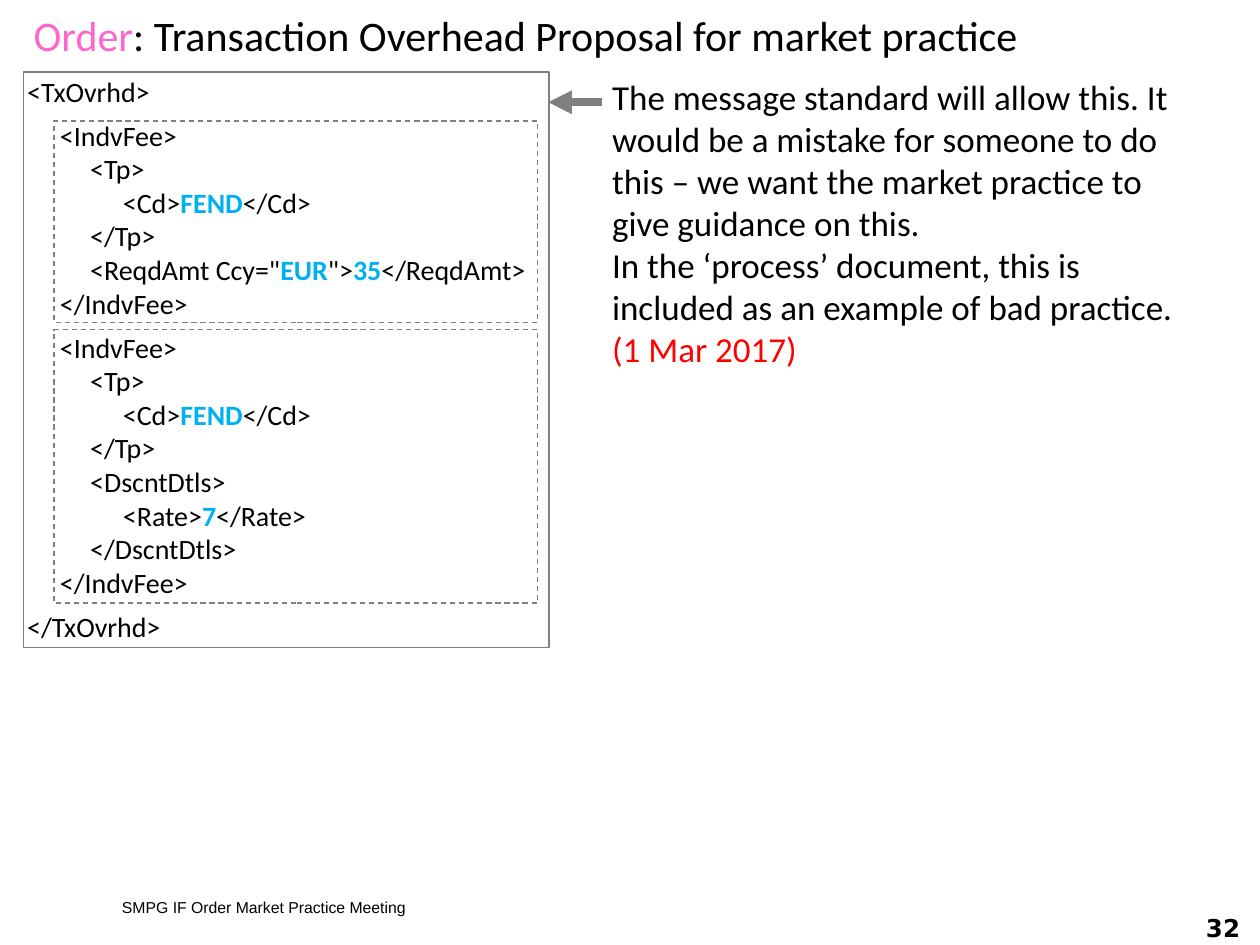
import pptx
import pptx.dml.color
import pptx.enum.dml
import pptx.enum.shapes
import pptx.enum.text
import pptx.oxml
import pptx.oxml.ns
import pptx.util

Cm, Pt = pptx.util.Cm, pptx.util.Pt
ALIGN = pptx.enum.text.PP_ALIGN
ANCHOR = pptx.enum.text.MSO_ANCHOR
BLACK, GREY, WHITE = "000000", "808080", "FFFFFF"
PINK, BLUE, RED = "FF66CC", "00B0F0", "FF0000"

# Content: a run is (text, colour)
TITLE = [[("Order", PINK), (": Transaction Overhead Proposal for market practice", BLACK)]]
COMMENT = [
    [("The message standard will allow this. It would be a mistake for someone to do this "
      "– we want the market practice to give guidance on this.", BLACK)],
    [("In the ‘process’ document, this is included as an example of bad practice. ", BLACK),
     ("(1 Mar 2017)", RED)],
]
FOOTER = [[("SMPG IF Order Market Practice Meeting", BLACK)]]
PAGE_NUMBER = [[("32", BLACK)]]

# Message lines: (indent level, pieces); every second piece is a value
FEE_TYPE = [
    (1, ["<IndvFee>"]),
    (2, ["<Tp>"]),
    (3, ["<Cd>", "FEND", "</Cd>"]),
    (2, ["</Tp>"]),
]
FEE_END = (1, ["</IndvFee>"])
MESSAGE = [
    (0, ["<TxOvrhd>"]),
    *FEE_TYPE,
    (2, ['<ReqdAmt Ccy="', "EUR", '">', "35", "</ReqdAmt>"]),
    FEE_END,
    *FEE_TYPE,
    (2, ["<DscntDtls>"]),
    (3, ["<Rate>", "7", "</Rate>"]),
    (2, ["</DscntDtls>"]),
    FEE_END,
    (0, ["</TxOvrhd>"]),
]
TAB_STOPS = [0.66, 1.27, 1.93, 3.2]
FEE_BOXES = [(2.44, 4.06), (6.65, 5.51)]  # top, height


def color(value):
    return pptx.dml.color.RGBColor.from_string(value)


def add_xml(parent, tag, **attributes):
    element = pptx.oxml.parse_xml(f"<a:{tag} {pptx.oxml.ns.nsdecls('a')}/>")
    for name, value in attributes.items():
        element.set(name, str(value))
    parent.append(element)
    return element


def add_box(slide, left, top, width, height, fill=None, dashed=False):
    shape = slide.shapes.add_shape(pptx.enum.shapes.MSO_SHAPE.RECTANGLE,
                                   Cm(left), Cm(top), Cm(width), Cm(height))
    shape.shadow.inherit = False
    if fill:
        shape.fill.solid()
        shape.fill.fore_color.rgb = color(fill)
    else:
        shape.fill.background()
    shape.line.color.rgb = color(GREY)
    shape.line.width = Pt(0.75)
    if dashed:
        shape.line.dash_style = pptx.enum.dml.MSO_LINE.DASH


def add_text(slide, area, paragraphs, size, font="Calibri", bold=False,
             align=ALIGN.LEFT, anchor=ANCHOR.TOP, tab_stops=()):
    frame = slide.shapes.add_textbox(*map(Cm, area)).text_frame
    frame.word_wrap = True
    frame.vertical_anchor = anchor
    for index, runs in enumerate(paragraphs):
        paragraph = frame.add_paragraph() if index else frame.paragraphs[0]
        if tab_stops:
            tab_list = add_xml(paragraph._p.get_or_add_pPr(), "tabLst")
            for stop in tab_stops:
                add_xml(tab_list, "tab", pos=int(Cm(stop)), algn="l")
        paragraph.alignment = align
        paragraph.font.name = font
        paragraph.font.size = Pt(size)
        paragraph.font.bold = bold
        for text, run_color in runs:
            run = paragraph.add_run()
            run.text = text
            run.font.color.rgb = color(run_color)
            if run_color == BLUE:
                run.font.bold = True
    return frame


def message_runs(level, pieces):
    runs = [(piece, BLUE if index % 2 else BLACK) for index, piece in enumerate(pieces)]
    return [("\t" * level + runs[0][0], BLACK)] + runs[1:]


def add_arrow(slide, start, end, y):
    arrow = slide.shapes.add_connector(pptx.enum.shapes.MSO_CONNECTOR.STRAIGHT,
                                       Cm(start), Cm(y), Cm(end), Cm(y))
    arrow.line.color.rgb = color(GREY)
    arrow.line.width = Pt(4.5)
    add_xml(arrow.line._get_or_add_ln(), "tailEnd", type="triangle")
    add_xml(arrow._element.spPr, "effectLst")


def main():
    presentation = pptx.Presentation()
    presentation.slide_width, presentation.slide_height = Cm(25.4), Cm(19.05)
    slide = presentation.slides.add_slide(presentation.slide_layouts[6])

    # Message with its frames
    add_box(slide, 0.48, 1.45, 10.59, 11.61, fill=WHITE)
    message = add_text(slide, (0.3, 1.37, 11.28, 11.84),
                       [message_runs(*line) for line in MESSAGE], 16, tab_stops=TAB_STOPS)
    for paragraph, line in zip(message.paragraphs, MESSAGE):
        if line == FEE_END or line == MESSAGE[0]:
            paragraph.space_after = Pt(6)
    for top, height in FEE_BOXES:
        add_box(slide, 1.09, top, 9.75, height, dashed=True)

    # Title, comment and arrow
    add_text(slide, (0.43, 0, 24.71, 1.42), TITLE, 24, anchor=ANCHOR.MIDDLE)
    add_text(slide, (12.09, 1.4, 12.14, 6.25), COMMENT, 20)
    add_arrow(slide, 12.14, 11.05, 2.06)

    # Footer
    add_text(slide, (2.21, 17.96, 15.77, 0.64), FOOTER, 9, font="Arial", anchor=ANCHOR.MIDDLE)
    add_text(slide, (23.14, 18.39, 2.11, 0.64), PAGE_NUMBER, 14, font="DejaVu Sans",
             bold=True, align=ALIGN.RIGHT, anchor=ANCHOR.MIDDLE)

    presentation.save("out.pptx")


if __name__ == "__main__":
    main()
